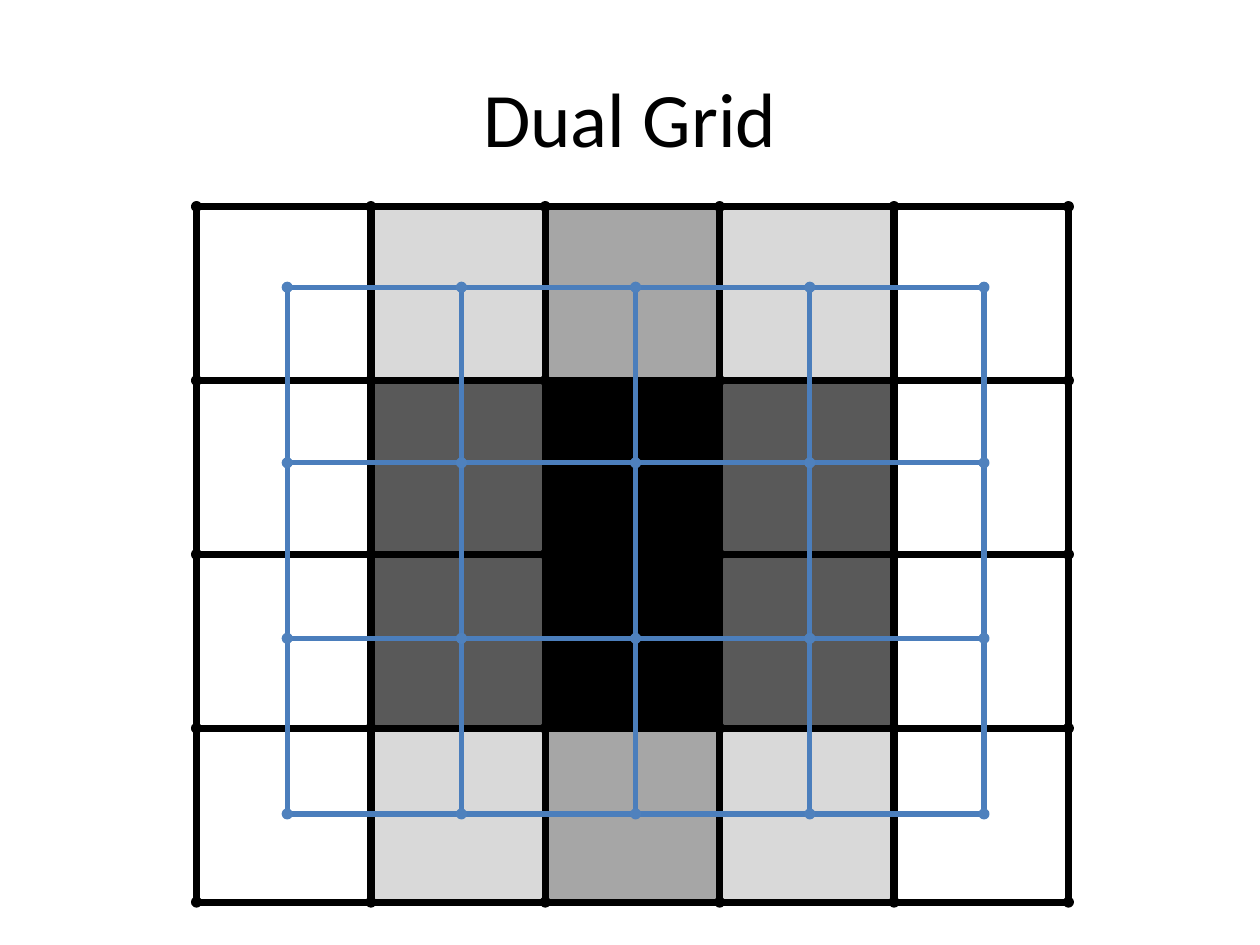
"""Build the Dual Grid slide: a shaded pixel grid with its dual laid over the cell centres."""

import dataclasses

import lxml.etree
import pptx
import pptx.dml.color
import pptx.enum.shapes
import pptx.enum.text
import pptx.oxml.ns
import pptx.util

SLIDE_COLUMNS = 100
SLIDE_ROWS = 75
UNIT = pptx.util.Inches(0.1)
COLORS = {
    "black": "000000",
    "dark": "595959",
    "medium": "A6A6A6",
    "light": "D9D9D9",
    "dual_node": "4F81BD",
    "dual_line": "4B7EBC",
}
OUTER_ROW = (None, "light", "medium", "light", None)
INNER_ROW = (None, "dark", "black", "dark", None)
SHADES = (OUTER_ROW, INNER_ROW, INNER_ROW, OUTER_ROW)
SHAPES = pptx.enum.shapes.MSO_SHAPE


@dataclasses.dataclass(frozen=True)
class Grid:
    """A lattice measured in slide columns and rows."""

    left: float
    top: float
    width: float
    height: float
    columns: int
    rows: int

    def x(self, column: float) -> float:
        """Return the slide column of a lattice column."""
        return self.left + self.width * column / self.columns

    def y(self, row: float) -> float:
        """Return the slide row of a lattice row."""
        return self.top + self.height * row / self.rows


PIXELS = Grid(15.6, 16.4, 69.2, 55.2, 5, 4)
DUAL = Grid(22.8, 22.8, 55.3, 41.8, 4, 3)
CELL_SIZE = 13.7
FRAME_SIZE = 14.1
NODE_SIZE = 0.6


def length(units: float) -> int:
    """Convert slide columns or rows to a length."""
    return round(units * UNIT)


def rgb(name: str) -> pptx.dml.color.RGBColor:
    """Look up a named colour."""
    return pptx.dml.color.RGBColor.from_string(COLORS[name])


def add_centered(slide, kind, x: float, y: float, size: float, color: str, line_width: float = 0):
    """Draw a square-bounded shape centred on a point."""
    shape = slide.shapes.add_shape(
        kind, length(x - size / 2), length(y - size / 2), length(size), length(size)
    )
    shape.shadow.inherit = False
    shape.fill.solid()
    shape.fill.fore_color.rgb = rgb(color)
    if line_width:
        shape.line.color.rgb = rgb(color)
        shape.line.width = pptx.util.Pt(line_width)
    else:
        shape.line.fill.background()
    return shape


def add_line(slide, start: tuple[float, float], end: tuple[float, float]) -> None:
    """Draw one line of the dual grid."""
    connector = slide.shapes.add_connector(
        pptx.enum.shapes.MSO_CONNECTOR.STRAIGHT, *map(length, start + end)
    )
    connector.line.color.rgb = rgb("dual_line")
    connector.line.width = pptx.util.Pt(3)
    properties = connector._element.spPr
    lxml.etree.SubElement(properties, pptx.oxml.ns.qn("a:effectLst"))


def add_nodes(slide, grid: Grid, color: str) -> None:
    """Mark every lattice point of a grid."""
    for row in range(grid.rows + 1):
        for column in range(grid.columns + 1):
            add_centered(
                slide, SHAPES.OVAL, grid.x(column), grid.y(row), NODE_SIZE, color, 2
            )


def add_pixels(slide, grid: Grid) -> None:
    """Draw the shaded cells and then their frames."""
    centers = [
        (grid.x(column + 0.5), grid.y(row + 0.5), shade)
        for row, shades in enumerate(SHADES)
        for column, shade in enumerate(shades)
    ]
    for x, y, shade in centers:
        if shade:
            add_centered(slide, SHAPES.RECTANGLE, x, y, CELL_SIZE, shade)
    for x, y, _ in centers:
        frame = add_centered(slide, SHAPES.FRAME, x, y, FRAME_SIZE, "black", 2)
        frame.adjustments[0] = 0.02


def add_dual_lines(slide, grid: Grid) -> None:
    """Draw the horizontal and vertical lines of a grid."""
    for row in range(grid.rows + 1):
        add_line(slide, (grid.x(0), grid.y(row)), (grid.x(grid.columns), grid.y(row)))
    for column in range(grid.columns + 1):
        add_line(slide, (grid.x(column), grid.y(0)), (grid.x(column), grid.y(grid.rows)))


def set_title(slide, text: str) -> None:
    """Place and format the slide title."""
    title = slide.shapes.title
    title.left, title.top, title.width, title.height = map(length, (5, 3, 90, 12.5))
    title.text_frame.text = text
    title.text_frame.vertical_anchor = pptx.enum.text.MSO_ANCHOR.MIDDLE
    paragraph = title.text_frame.paragraphs[0]
    paragraph.alignment = pptx.enum.text.PP_ALIGN.CENTER
    font = paragraph.runs[0].font
    font.name = "Calibri"
    font.size = pptx.util.Pt(44)
    font.color.rgb = rgb("black")


def main() -> None:
    """Build and save the presentation."""
    presentation = pptx.Presentation()
    presentation.slide_width = length(SLIDE_COLUMNS)
    presentation.slide_height = length(SLIDE_ROWS)
    slide = presentation.slides.add_slide(presentation.slide_layouts.get_by_name("Title Only"))
    set_title(slide, "Dual Grid")
    add_pixels(slide, PIXELS)
    add_nodes(slide, PIXELS, "black")
    add_dual_lines(slide, DUAL)
    add_nodes(slide, DUAL, "dual_node")
    presentation.save("out.pptx")


if __name__ == "__main__":
    main()
